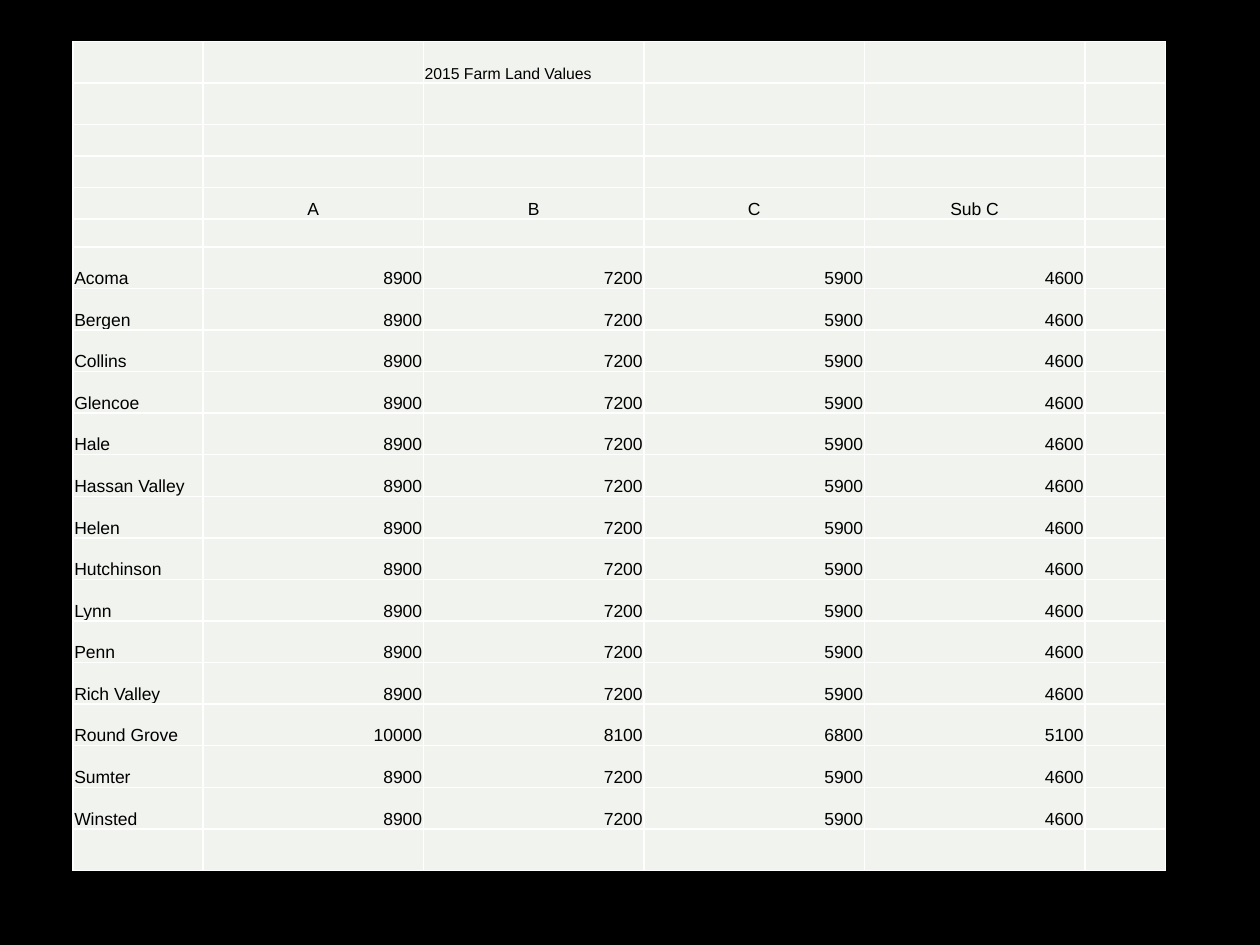
from lxml.etree import SubElement
from pptx import Presentation
from pptx.dml.color import RGBColor
from pptx.enum.text import MSO_ANCHOR, PP_ALIGN
from pptx.oxml.ns import qn
from pptx.util import Inches, Pt

BLACK = RGBColor(0x00, 0x00, 0x00)
WHITE = RGBColor(0xFF, 0xFF, 0xFF)
PALE_GREEN = RGBColor(0xF0, 0xF3, 0xEE)

COLUMN_WIDTHS = [1.03, 1.75, 1.75, 1.75, 1.75, 0.64]
ROW_HEIGHTS = [0.33] * 2 + [0.25] * 3 + [0.22] + [0.33] * 15
HEADING_ROW = 4
FIRST_TOWNSHIP_ROW = 6

LAND_CLASSES = ["A", "B", "C", "Sub C"]
TOWNSHIPS = [
    "Acoma", "Bergen", "Collins", "Glencoe", "Hale", "Hassan Valley", "Helen",
    "Hutchinson", "Lynn", "Penn", "Rich Valley", "Round Grove", "Sumter", "Winsted",
]
USUAL_VALUES = [8900, 7200, 5900, 4600]
SPECIAL_VALUES = {"Round Grove": [10000, 8100, 6800, 5100]}


def write(cell, text, size=10, align=PP_ALIGN.LEFT):
    paragraph = cell.text_frame.paragraphs[0]
    paragraph.alignment = align
    run = paragraph.add_run()
    run.text = str(text)
    run.font.name = "Arial"
    run.font.size = Pt(size)
    run.font.color.rgb = BLACK


def add_border(cell):
    properties = cell._tc.get_or_add_tcPr()
    for side in ("lnL", "lnR", "lnT", "lnB"):
        line = SubElement(properties, qn(f"a:{side}"), w=str(Pt(1)))
        fill = SubElement(line, qn("a:solidFill"))
        SubElement(fill, qn("a:srgbClr"), val=str(WHITE))


prs = Presentation()
prs.slide_width, prs.slide_height = Inches(10), Inches(7.5)
slide = prs.slides.add_slide(prs.slide_layouts[6])
slide.background.fill.solid()
slide.background.fill.fore_color.rgb = BLACK

land_values = slide.shapes.add_table(
    len(ROW_HEIGHTS), len(COLUMN_WIDTHS),
    Inches(0.58), Inches(0.33), Inches(sum(COLUMN_WIDTHS)), Inches(sum(ROW_HEIGHTS)),
).table
land_values.first_row = False
land_values.horz_banding = False
for column, width in zip(land_values.columns, COLUMN_WIDTHS):
    column.width = Inches(width)
for row, height in zip(land_values.rows, ROW_HEIGHTS):
    row.height = Inches(height)

for cell in land_values.iter_cells():
    add_border(cell)
    cell.fill.solid()
    cell.fill.fore_color.rgb = PALE_GREEN
    cell.vertical_anchor = MSO_ANCHOR.BOTTOM
    cell.margin_left = cell.margin_right = cell.margin_top = Inches(0.01)
    cell.margin_bottom = 0

write(land_values.cell(0, 2), "2015 Farm Land Values", size=9, align=PP_ALIGN.JUSTIFY)
for col, land_class in enumerate(LAND_CLASSES, start=1):
    write(land_values.cell(HEADING_ROW, col), land_class, align=PP_ALIGN.CENTER)
for row, township in enumerate(TOWNSHIPS, start=FIRST_TOWNSHIP_ROW):
    write(land_values.cell(row, 0), township)
    for col, value in enumerate(SPECIAL_VALUES.get(township, USUAL_VALUES), start=1):
        write(land_values.cell(row, col), value, align=PP_ALIGN.RIGHT)

# Empty cells need a small text size too, or they stretch the low rows
for cell in land_values.iter_cells():
    if not cell.text:
        SubElement(cell.text_frame.paragraphs[0]._p, qn("a:endParaRPr"), sz="1000")

prs.save("out.pptx")
